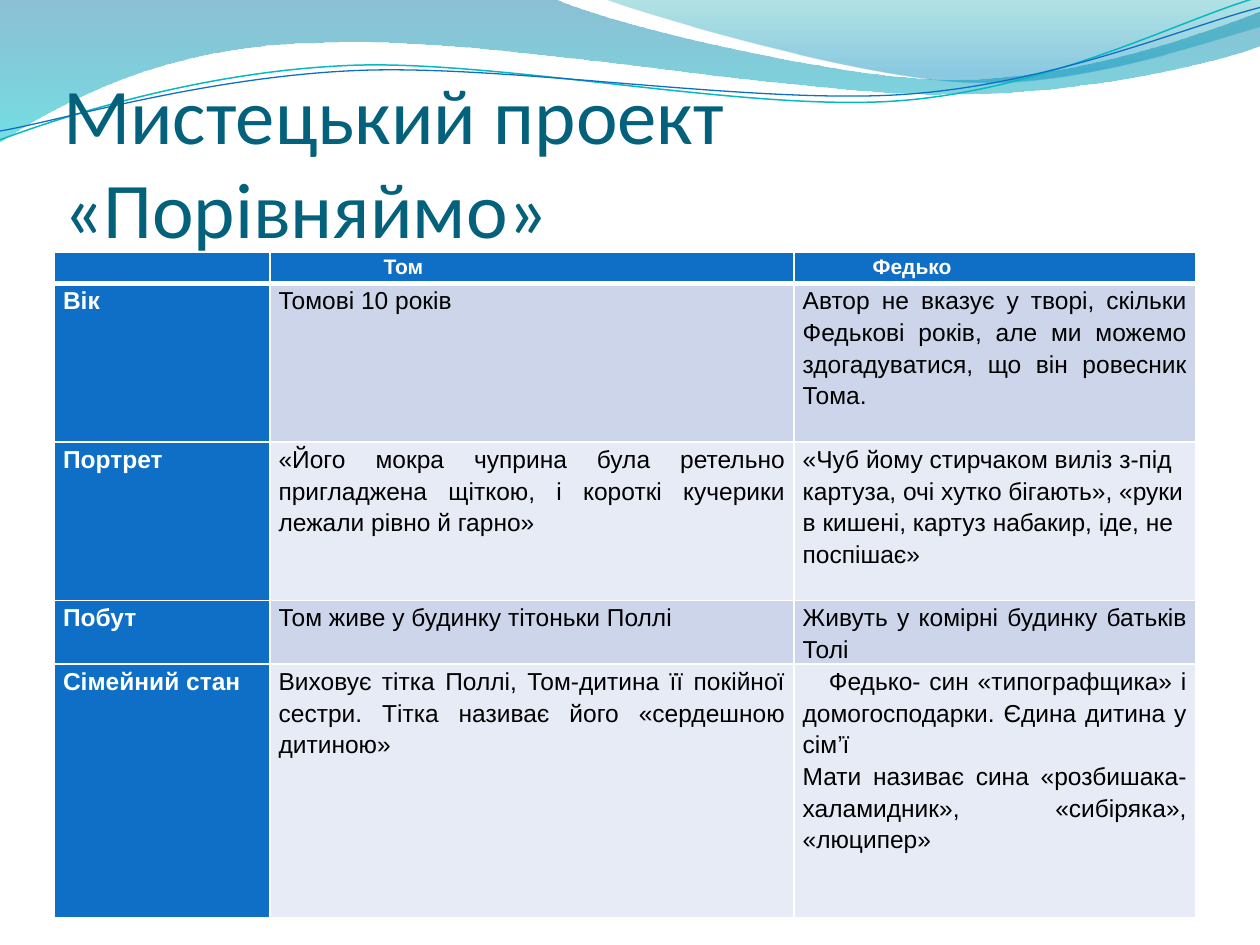
from dataclasses import dataclass
from math import cos, radians, sin

from lxml.etree import SubElement
from pptx import Presentation
from pptx.dml.color import RGBColor
from pptx.enum.text import MSO_ANCHOR, MSO_AUTO_SIZE, PP_ALIGN
from pptx.oxml.ns import qn
from pptx.util import Pt

COLORS = {
    "title": "04617B",
    "header": "0F6FC6",
    "band_dark": "CCD5EA",
    "band_light": "E7EBF5",
    "white": "FFFFFF",
    "black": "000000",
    "sea": "0074A1",
    "aqua": "00C6CF",
    "teal": "00A1A9",
    "sky": "008BBF",
    "thread": "0AB8BF",
}
THREAD_TILT = -2.7


@dataclass
class Stop:
    position: float
    color: str
    opacity: int


@dataclass
class Wave:
    start: tuple
    segments: list
    stops: tuple


@dataclass
class Thread:
    center: tuple
    start: tuple
    segments: list
    color: str
    width: float


@dataclass
class Entry:
    paragraphs: tuple
    indent: float = 0
    align: PP_ALIGN = PP_ALIGN.JUSTIFY


WAVES = [
    Wave((0, -0.7), [
        [(316.8, -0.7)],
        [(342.7, 12.2), (478.1, 45.4), (545.8, 45.4)],
        [(614.2, 45.4), (689.8, 18.7), (720, 6.5)],
        [(720.7, 25.9)],
        [(707.8, 31.7), (626.4, 54.7), (537.1, 54)],
        [(447.8, 54), (275, 20.2), (185, 24.5)],
        [(92.9, 25.2), (33.1, 59.8), (-0.7, 81.4)],
        [(0, -0.7)],
    ], (Stop(0, "sea", 45), Stop(1, "aqua", 55))),
    Wave((344.9, -0.7), [
        [(366.5, 7.9), (491, 44.6), (553.7, 46.8)],
        [(616.3, 49.7), (691.9, 23), (720, 15.1)],
        [(720, 0)],
        [(344.9, -0.7)],
    ], (Stop(0, "teal", 30), Stop(0.8, "sky", 45))),
]
THREADS = [
    Thread((359.3, 41.4), (0, 79.9), [
        [(34.6, 67), (113.8, 41), (199.4, 37.4)],
        [(284.4, 33.8), (427, 64.1), (513.4, 57.6)],
        [(599.8, 51.1), (675.4, 10.8), (718.6, -1.4)],
    ], "thread", 0.85),
    Thread((359.6, 42.5), (0, 74.9), [
        [(33.8, 69.1), (118.1, 43.9), (203.8, 40.3)],
        [(290.2, 36.7), (429.8, 59.8), (516.2, 54)],
        [(601.9, 48.2), (677.5, 15.1), (720, 4.3)],
    ], "header", 0.75),
]

COLUMN_WIDTHS = [123.2, 299.5, 229.5]
ROW_HEIGHTS = [18, 90.6, 90.6, 36.3, 145]
COMPARISON = [
    [Entry(("",)), Entry(("Том",), 60, PP_ALIGN.LEFT), Entry(("Федько",), 40)],
    [Entry(("Вік",)), Entry(("Томові 10 років",)),
     Entry(("Автор не вказує у творі, скільки Федькові років, але ми можемо "
            "здогадуватися, що він ровесник Тома.",))],
    [Entry(("Портрет",)),
     Entry(("«Його мокра чуприна була ретельно пригладжена щіткою, і короткі "
            "кучерики лежали рівно й гарно»",)),
     Entry(("«Чуб йому стирчаком виліз з-під картуза, очі хутко бігають», «руки в "
            "кишені, картуз набакир, іде, не поспішає»",), align=PP_ALIGN.LEFT)],
    [Entry(("Побут",)), Entry(("Том живе у будинку тітоньки Поллі",)),
     Entry(("Живуть у комірні будинку батьків Толі",))],
    [Entry(("Сімейний стан",)),
     Entry(("Виховує тітка Поллі, Том-дитина її покійної сестри. Тітка називає "
            "його «сердешною дитиною»",)),
     Entry(("Федько- син «типографщика» і домогосподарки. Єдина дитина у сім’ї",
            "Мати називає сина «розбишака-халамидник», «сибіряка», «люципер»"), 15)],
]


def rgb(name: str) -> RGBColor:
    return RGBColor.from_string(COLORS[name])


def turn(point: tuple, center: tuple, degrees: float) -> tuple:
    angle = radians(degrees)
    x, y = point[0] - center[0], point[1] - center[1]
    return (center[0] + x * cos(angle) - y * sin(angle),
            center[1] + x * sin(angle) + y * cos(angle))


def draw_outline(slide, start: tuple, segments: list, close: bool):
    builder = slide.shapes.build_freeform(Pt(start[0]), Pt(start[1]))
    corners = [(Pt(x), Pt(y)) for segment in segments for x, y in segment]
    builder.add_line_segments(corners, close=close)
    outline = builder.convert_to_shape()
    outline.shadow.inherit = False
    steps = iter(list(outline._element.spPr.iter(qn("a:lnTo"))))
    for segment in segments:
        first, *others = [next(steps) for _ in segment]
        if others:
            first.tag = qn("a:cubicBezTo")
        for step in others:
            first.append(step[0])
            step.getparent().remove(step)
    return outline


def draw_wave(slide, wave: Wave) -> None:
    band = draw_outline(slide, wave.start, wave.segments, True)
    band.line.fill.background()
    band.fill.gradient()
    band.fill.gradient_angle = 270
    for gradient_stop, stop in zip(band.fill.gradient_stops, wave.stops):
        gradient_stop.position = stop.position
        gradient_stop.color.rgb = rgb(stop.color)
    for tint, stop in zip(band._element.spPr.iter(qn("a:srgbClr")), wave.stops):
        SubElement(tint, qn("a:alpha"), val=str(stop.opacity * 1000))


def draw_thread(slide, thread: Thread) -> None:
    start = turn(thread.start, thread.center, -THREAD_TILT)
    segments = [[turn(point, thread.center, -THREAD_TILT) for point in segment]
                for segment in thread.segments]
    strand = draw_outline(slide, start, segments, False)
    strand.rotation = THREAD_TILT
    strand.fill.background()
    strand.line.color.rgb = rgb(thread.color)
    strand.line.width = Pt(thread.width)


def draw_title(slide) -> None:
    title = slide.shapes.title
    slide.shapes._spTree.append(title._element)
    title.left, title.top, title.width, title.height = Pt(36), Pt(55.5), Pt(648), Pt(90)
    frame = title.text_frame
    frame.text = "Мистецький проект «Порівняймо»"
    frame.word_wrap = True
    frame.auto_size = MSO_AUTO_SIZE.NONE
    frame.vertical_anchor = MSO_ANCHOR.BOTTOM
    frame.margin_left = frame.margin_right = frame.margin_bottom = 0
    frame.margin_top = Pt(3.6)
    heading = frame.paragraphs[0]
    heading.alignment = PP_ALIGN.LEFT
    heading.line_spacing = 1.0
    font = heading.runs[0].font
    font.name, font.size, font.color.rgb = "Calibri", Pt(45), rgb("title")


def add_borders(cell, row: int) -> None:
    properties = cell._tc.get_or_add_tcPr()
    for side in "LRTB":
        thick = (row, side) in ((0, "B"), (1, "T"))
        border = SubElement(properties, qn(f"a:ln{side}"), w=str(Pt(3 if thick else 1)))
        fill = SubElement(border, qn("a:solidFill"))
        SubElement(fill, qn("a:srgbClr"), val=COLORS["white"])


def fill_cell(cell, entry: Entry, row: int, column: int) -> None:
    heading = row == 0 or column == 0
    size = 12 if row == 0 else 14
    add_borders(cell, row)
    cell.fill.solid()
    cell.fill.fore_color.rgb = rgb(
        "header" if heading else "band_dark" if row % 2 else "band_light")
    cell.margin_left = cell.margin_right = Pt(5)
    cell.margin_top = cell.margin_bottom = 0
    cell.vertical_anchor = MSO_ANCHOR.TOP
    cell.text_frame.text = "\n".join(entry.paragraphs)
    for index, paragraph in enumerate(cell.text_frame.paragraphs):
        paragraph.alignment = entry.align
        paragraph.line_spacing = 1.15
        if entry.indent and index == 0:
            paragraph._p.get_or_add_pPr().set("indent", str(Pt(entry.indent)))
        for run in paragraph.runs:
            font = run.font
            font.name, font.size, font.bold = "Arial", Pt(size), heading
            font.color.rgb = rgb("white" if heading else "black")
        if not paragraph.runs:
            SubElement(paragraph._p, qn("a:endParaRPr"), sz=str(size * 100))


def draw_comparison(slide) -> None:
    table = slide.shapes.add_table(
        len(ROW_HEIGHTS), len(COLUMN_WIDTHS), Pt(31), Pt(144),
        Pt(sum(COLUMN_WIDTHS)), Pt(sum(ROW_HEIGHTS))).table
    for column, width in zip(table.columns, COLUMN_WIDTHS):
        column.width = Pt(width)
    for row, height in zip(table.rows, ROW_HEIGHTS):
        row.height = Pt(height)
    for row, entries in enumerate(COMPARISON):
        for column, entry in enumerate(entries):
            fill_cell(table.cell(row, column), entry, row, column)


def main() -> None:
    deck = Presentation()
    deck.slide_width, deck.slide_height = Pt(720), Pt(540)
    slide = deck.slides.add_slide(deck.slide_layouts[5])
    for wave in WAVES:
        draw_wave(slide, wave)
    for thread in THREADS:
        draw_thread(slide, thread)
    draw_title(slide)
    draw_comparison(slide)
    deck.save("out.pptx")


if __name__ == "__main__":
    main()
